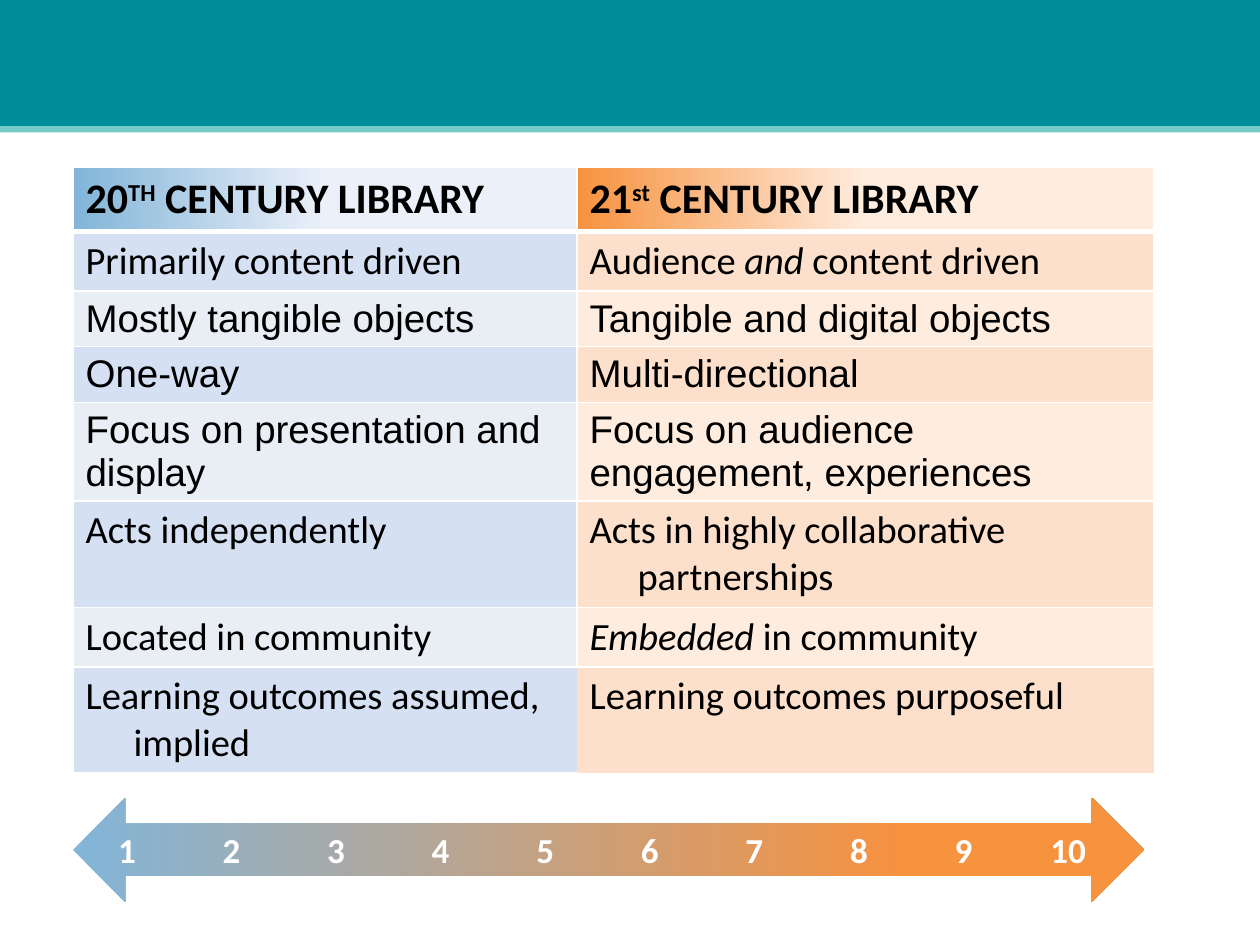
from dataclasses import dataclass

from lxml import etree
from pptx import Presentation
from pptx.dml.color import RGBColor
from pptx.enum.shapes import MSO_SHAPE
from pptx.enum.text import MSO_ANCHOR, PP_ALIGN
from pptx.oxml.ns import qn
from pptx.util import Inches, Pt

RECTANGLE = MSO_SHAPE.RECTANGLE
DOUBLE_ARROW = MSO_SHAPE.LEFT_RIGHT_ARROW
MIDDLE = MSO_ANCHOR.MIDDLE
LEFT = PP_ALIGN.LEFT


@dataclass(frozen=True)
class Theme:
    teal: str = "008C99"
    aqua: str = "74CBC8"
    blue: str = "82B5D8"
    orange: str = "F7923F"
    header_ends: tuple = ("EBF0F9", "FEECDE")
    odd_row: tuple = ("D5E0F3", "FDE0CB")
    even_row: tuple = ("E9EDF4", "FEECDE")
    white: str = "FFFFFF"
    black: str = "000000"
    font: str = "Calibri"
    plain_font: str = "Arial"
    header_size: int = 24
    body_size: int = 22
    scale_size: int = 20


theme = Theme()


def set_gradient(fill, start, end, end_position):
    fill.gradient()
    fill.gradient_angle = 0
    for stop, color, position in zip(fill.gradient_stops, (start, end), (0, end_position)):
        stop.color.rgb = RGBColor.from_string(color)
        stop.position = position


def set_borders(cell, widths):
    """Draw white borders; widths maps a side (L, R, T, B) to points."""
    properties = cell._tc.get_or_add_tcPr()
    for index, (side, width) in enumerate(widths.items()):
        line = etree.Element(qn(f"a:ln{side}"), w=str(Pt(width)))
        solid = etree.SubElement(line, qn("a:solidFill"))
        etree.SubElement(solid, qn("a:srgbClr"), val=theme.white)
        properties.insert(index, line)


deck = Presentation()
deck.slide_width, deck.slide_height = Inches(10), Inches(7.5)
page = deck.slides.add_slide(deck.slide_layouts[6])

# Top bands
for top, height, color in ((0, 1, theme.teal), (1, 0.05, theme.aqua)):
    band = page.shapes.add_shape(RECTANGLE, 0, Inches(top), Inches(10), Inches(height))
    band.shadow.inherit = False
    band.fill.solid()
    band.fill.fore_color.rgb = RGBColor.from_string(color)
    band.line.fill.background()

# Scale arrow, with the numbers on evenly spaced centred tabs
arrow = page.shapes.add_shape(DOUBLE_ARROW, Inches(0.58), Inches(6.33), Inches(8.5), Inches(0.83))
arrow.shadow.inherit = False
set_gradient(arrow.fill, theme.blue, theme.orange, 0.78)
arrow.line.fill.background()
frame = arrow.text_frame
frame.word_wrap = True
frame.vertical_anchor = MIDDLE
frame.margin_left = frame.margin_right = 0
para = frame.paragraphs[0]
para.alignment = LEFT
para.add_run().text = "".join(f"\t{number}" for number in range(1, 11))
tabs = etree.SubElement(para._p.get_or_add_pPr(), qn("a:tabLst"))
for step in range(10):
    etree.SubElement(tabs, qn("a:tab"), pos=str(Inches(0.22 + step * 0.83)), algn="ctr")
para.font.name = theme.font
para.font.size = Pt(theme.scale_size)
para.font.bold = True
para.font.color.rgb = RGBColor.from_string(theme.white)

# Comparison table: each cell is a list of (text, style) spans
rows = [
    ([("20", ""), ("TH", "super"), (" CENTURY LIBRARY", "")],
     [("21", ""), ("st", "super"), (" CENTURY LIBRARY", "")]),
    ([("Primarily content driven", "")],
     [("Audience ", ""), ("and", "italic"), (" content driven", "")]),
    ([("Mostly tangible objects", "")], [("Tangible and digital objects", "")]),
    ([("One-way", "")], [("Multi-directional", "")]),
    ([("Focus on presentation and display", "")],
     [("Focus on audience engagement, experiences", "")]),
    ([("Acts independently", "")], [("Acts in highly collaborative partnerships", "")]),
    ([("Located in community", "")], [("Embedded", "italic"), (" in community", "")]),
    ([("Learning outcomes assumed, implied", "")], [("Learning outcomes purposeful", "")]),
]
plain_rows = (2, 3, 4)
open_sides = {(6, 1): "B", (7, 0): "R", (7, 1): "LRTB"}

table = page.shapes.add_table(
    len(rows), 2, Inches(0.58), Inches(1.33), Inches(8.58), Inches(3.28)
).table
table._tbl.tblPr.find(qn("a:tableStyleId")).text = "{2D5ABB26-0587-4C30-8999-92F81FD0307C}"
for column, width in zip(table.columns, (4, 4.58)):
    column.width = Inches(width)

for row_index, row in enumerate(rows):
    header = row_index == 0
    plain = row_index in plain_rows
    for column_index, spans in enumerate(row):
        cell = table.cell(row_index, column_index)

        # Fill and borders
        if header:
            start = (theme.blue, theme.orange)[column_index]
            set_gradient(cell.fill, start, theme.header_ends[column_index], 0.5)
        else:
            colors = theme.odd_row if row_index % 2 else theme.even_row
            cell.fill.solid()
            cell.fill.fore_color.rgb = RGBColor.from_string(colors[column_index])
        skipped = open_sides.get((row_index, column_index), "")
        set_borders(cell, {side: 3 if header and side == "B" else 1
                           for side in "LRTB" if side not in skipped})

        # Text
        para = cell.text_frame.paragraphs[0]
        if not header and not plain:
            properties = para._p.get_or_add_pPr()
            properties.set("marL", str(Inches(0.38)))
            properties.set("indent", str(Inches(-0.38)))
        for text, style in spans:
            span = para.add_run()
            span.text = text
            span.font.name = theme.plain_font if plain else theme.font
            span.font.size = Pt(theme.header_size if header else theme.body_size)
            span.font.bold = header
            span.font.color.rgb = RGBColor.from_string(theme.black)
            if style == "italic":
                span.font.italic = True
            elif style == "super":
                span._r.get_or_add_rPr().set("baseline", "30000")

deck.save("out.pptx")
